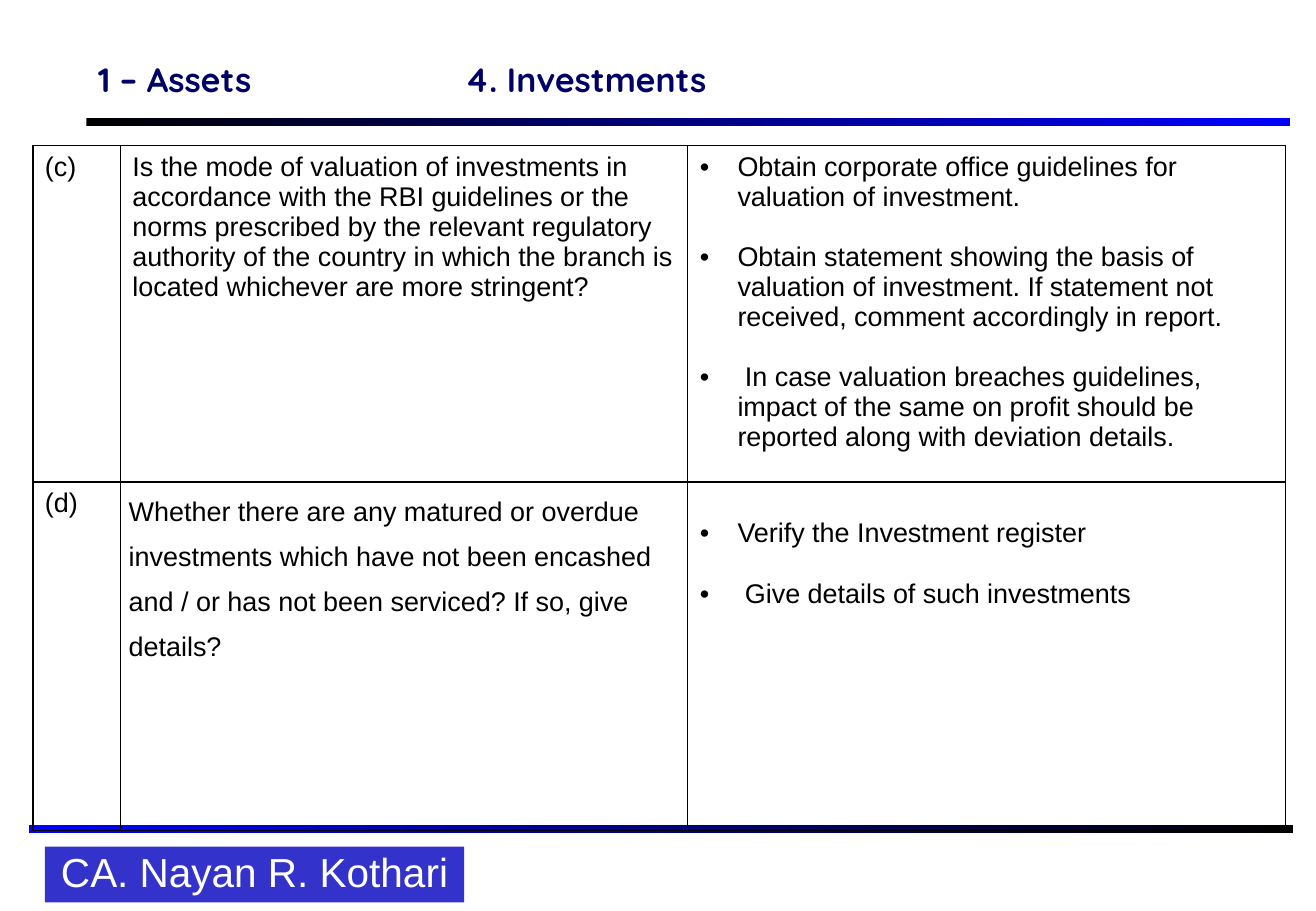
import pptx
import pptx.dml.color
import pptx.enum.shapes
import pptx.enum.text
import pptx.oxml
import pptx.oxml.ns
import pptx.util

Inches = pptx.util.Inches
Pt = pptx.util.Pt
ANCHOR = pptx.enum.text.MSO_ANCHOR
ALIGN = pptx.enum.text.PP_ALIGN
RECT = pptx.enum.shapes.MSO_SHAPE.RECTANGLE

COLORS = {"black": "000000", "blue": "0000FF", "navy": "000066",
          "badge": "3333CC", "white": "FFFFFF"}
TITLE = {"name": "Quicksand", "size": Pt(20), "bold": True}
BODY = {"name": "Arial", "size": Pt(16), "bold": False}
BADGE = {"name": "Arial", "size": Pt(24), "bold": False}
NO_MARGINS = dict.fromkeys(
    ["margin_left", "margin_right", "margin_top", "margin_bottom"], 0)

QUESTION_C = [
    "Is the mode of valuation of investments in accordance with the RBI guidelines "
    "or the norms prescribed by the relevant regulatory authority of the country "
    "in which the branch is",
    "located whichever are more stringent?",
]
CHECKS_C = [
    "Obtain corporate office guidelines for valuation of investment.",
    "Obtain statement showing the basis of valuation of investment. If statement "
    "not received, comment accordingly in report.",
    " In case valuation breaches guidelines, impact of the same on profit should be "
    "reported along with deviation details.",
]
QUESTION_D = [
    "Whether there are any matured or overdue investments which have not been "
    "encashed and / or has not been serviced? If so, give",
    "details?",
]
CHECKS_D = ["Verify the Investment register", " Give details of such investments"]

ROWS = [
    [{"lines": ["(c)"]}, {"lines": QUESTION_C}, {"lines": CHECKS_C, "bullet": True}],
    [{"lines": ["(d)"]},
     {"lines": QUESTION_D, "spacing": 1.5,
      "margins": {**NO_MARGINS, "margin_left": Inches(0.07)}},
     {"lines": CHECKS_D, "bullet": True, "margins": {"margin_top": Inches(0.3)}}],
]
COL_WIDTHS = [0.72, 4.67, 4.92]
ROW_HEIGHTS = [2.77, 2.87]


def rgb(name):
    return pptx.dml.color.RGBColor.from_string(COLORS[name])


def apply(target, values):
    for key, value in values.items():
        setattr(target, key, value)


def add_run(p, text, font, color):
    r = p.add_run()
    r.text = text
    apply(r.font, font)
    r.font.color.rgb = rgb(color)


def add_element(parent, xml):
    parent.append(pptx.oxml.parse_xml(
        xml.replace(" ", f" {pptx.oxml.ns.nsdecls('a')} ", 1)))


def add_rect(s, box):
    sp = s.shapes.add_shape(RECT, *map(Inches, box))
    sp.shadow.inherit = False
    sp.line.fill.background()
    return sp


def add_bar(s, box, start, end):
    fill = add_rect(s, box).fill
    fill.gradient()
    fill.gradient_angle = 0
    for stop, color, position in zip(fill.gradient_stops, (start, end), (0, 1)):
        stop.color.rgb = rgb(color)
        stop.position = position


def add_title(s, box):
    x, y, w, h = box
    sp = s.shapes.add_textbox(*map(Inches, (x, y, w, h - 0.14)))
    tf = sp.text_frame
    apply(tf, {"word_wrap": True, "vertical_anchor": ANCHOR.MIDDLE})
    p = tf.paragraphs[0]
    add_element(p._p.get_or_add_pPr(),
                f'<a:tabLst ><a:tab pos="{Inches(3.02)}" algn="l"/></a:tabLst>')
    add_run(p, "1 – Assets\t4. Investments", TITLE, "navy")
    add_bar(s, (x, y + h - 0.07, w, 0.07), "black", "blue")


def add_borders(cell):
    tcPr = cell._tc.get_or_add_tcPr()
    for side in "LRTB":
        add_element(tcPr, f'<a:ln{side} w="{Pt(1)}"><a:solidFill><a:srgbClr '
                          f'val="{COLORS["black"]}"/></a:solidFill></a:ln{side}>')


def fill_cell(cell, lines, bullet=False, spacing=1.0, margins=None):
    add_borders(cell)
    cell.fill.background()
    apply(cell, margins or {})
    tf = cell.text_frame
    for i, line in enumerate(lines):
        p = tf.add_paragraph() if i else tf.paragraphs[0]
        if bullet:
            pPr = p._p.get_or_add_pPr()
            pPr.set("marL", str(Inches(0.31)))
            pPr.set("indent", str(-Inches(0.31)))
            add_element(pPr, '<a:buFont typeface="Arial"/>')
            add_element(pPr, '<a:buChar char="•"/>')
        apply(p, {"alignment": ALIGN.LEFT, "line_spacing": spacing,
                  "space_before": Pt(18 if bullet and i else 0)})
        add_run(p, line, BODY, "black")


def add_checklist(s, box):
    table = s.shapes.add_table(len(ROWS), len(COL_WIDTHS), *map(Inches, box)).table
    apply(table, {"first_row": False, "horz_banding": False})
    for col, width in zip(table.columns, COL_WIDTHS):
        col.width = Inches(width)
    for row, height, contents in zip(table.rows, ROW_HEIGHTS, ROWS):
        row.height = Inches(height)
        for cell, content in zip(row.cells, contents):
            fill_cell(cell, **content)


def add_footer(s, box):
    x, y, w, h = box
    add_bar(s, (x, y, w, 0.07), "blue", "black")
    sp = add_rect(s, (x + 0.13, y + 0.18, 3.45, h - 0.18))
    sp.fill.solid()
    sp.fill.fore_color.rgb = rgb("badge")
    tf = sp.text_frame
    apply(tf, {"word_wrap": False, "vertical_anchor": ANCHOR.MIDDLE})
    p = tf.paragraphs[0]
    apply(p, {"alignment": ALIGN.CENTER, "line_spacing": 0.9})
    add_run(p, "CA. Nayan R. Kothari", BADGE, "white")


def main():
    prs = pptx.Presentation()
    apply(prs, {"slide_width": Inches(10.83), "slide_height": Inches(7.5)})
    s = prs.slides.add_slide(prs.slide_layouts[6])
    add_footer(s, (0.24, 6.79, 10.4, 0.64))
    add_title(s, (0.71, 0.4, 9.91, 0.64))
    add_checklist(s, (0.27, 1.2, 10.31, 5.64))
    prs.save("out.pptx")


if __name__ == "__main__":
    main()
